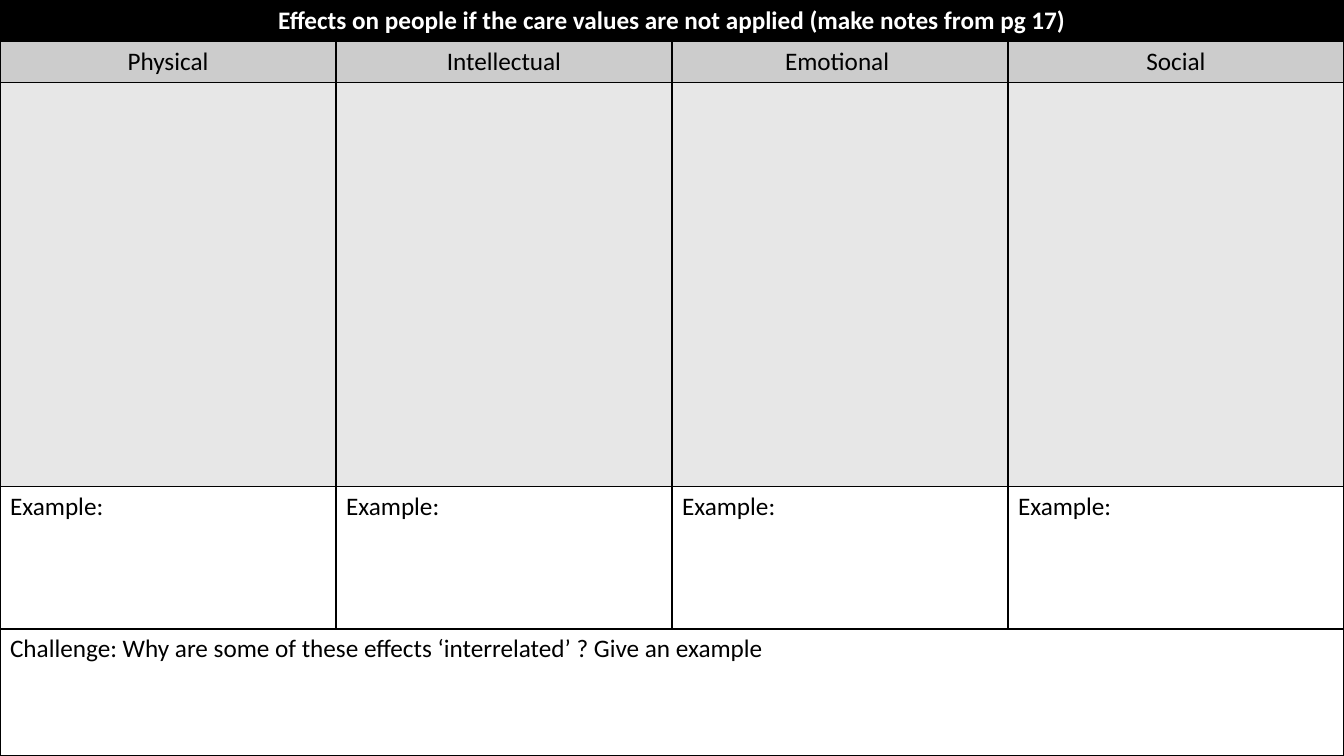
from dataclasses import dataclass

from lxml import etree
from pptx import Presentation
from pptx import util as u
from pptx.dml.color import RGBColor
from pptx.enum import text
from pptx.oxml import ns


@dataclass(frozen=True)
class Theme:
    font: str = "Calibri"
    size: int = 18
    line: int = 1
    page: str = "FFE699"
    black: str = "000000"
    white: str = "FFFFFF"
    head: str = "CCCCCC"
    notes: str = "E7E7E7"


THEME = Theme()
WIDTH, HEIGHT = 13.33, 7.5
ROWS = [0.41, 0.41, 4.01, 1.41, 1.26]
TITLE = "Effects on people if the care values are not applied (make notes from pg 17)"
EFFECTS = ["Physical", "Intellectual", "Emotional ", "Social"]
TASK = "Challenge: Why are some of these effects ‘interrelated’ ? Give an example"


def add_edges(cell):
    props = cell._tc.get_or_add_tcPr()
    for spot, side in enumerate(("lnL", "lnR", "lnT", "lnB")):
        edge = etree.Element(ns.qn(f"a:{side}"), w=str(u.Pt(THEME.line)))
        fill = etree.SubElement(edge, ns.qn("a:solidFill"))
        etree.SubElement(fill, ns.qn("a:srgbClr"), val=THEME.black)
        props.insert(spot, edge)


def fill_cell(cell, words, fill, color=THEME.black, center=False, bold=False):
    cell.fill.solid()
    cell.fill.fore_color.rgb = RGBColor.from_string(fill)
    add_edges(cell)
    cell.text = words
    para = cell.text_frame.paragraphs[0]
    para.alignment = text.PP_ALIGN.CENTER if center else text.PP_ALIGN.LEFT
    font = para.font
    font.name, font.size, font.bold = THEME.font, u.Pt(THEME.size), bold
    font.color.rgb = RGBColor.from_string(color)


def fill_band(table, row, words, fill, **style):
    last = len(table.columns) - 1
    table.cell(row, 0).merge(table.cell(row, last))
    fill_cell(table.cell(row, 0), words, fill, **style)
    for col in range(1, last + 1):
        add_edges(table.cell(row, col))


def fill_row(table, row, labels, fill, **style):
    for col, label in enumerate(labels):
        fill_cell(table.cell(row, col), label, fill, **style)


def add_grid(slide):
    count = len(EFFECTS)
    table = slide.shapes.add_table(
        len(ROWS), count, 0, 0, u.Inches(WIDTH), u.Inches(HEIGHT)
    ).table
    table.first_row = table.horz_banding = False
    for col in table.columns:
        col.width = u.Inches(WIDTH / count)
    for row, height in zip(table.rows, ROWS):
        row.height = u.Inches(height)
    return table


def main():
    deck = Presentation()
    deck.slide_width, deck.slide_height = u.Inches(WIDTH), u.Inches(HEIGHT)
    slide = deck.slides.add_slide(deck.slide_layouts[6])
    slide.background.fill.solid()
    slide.background.fill.fore_color.rgb = RGBColor.from_string(THEME.page)

    table = add_grid(slide)
    count = len(EFFECTS)
    fill_band(table, 0, TITLE, THEME.black, color=THEME.white, center=True, bold=True)
    fill_row(table, 1, EFFECTS, THEME.head, center=True)
    fill_row(table, 2, [""] * count, THEME.notes)
    fill_row(table, 3, ["Example:"] * count, THEME.white)
    fill_band(table, 4, TASK, THEME.white)
    deck.save("out.pptx")


if __name__ == "__main__":
    main()
